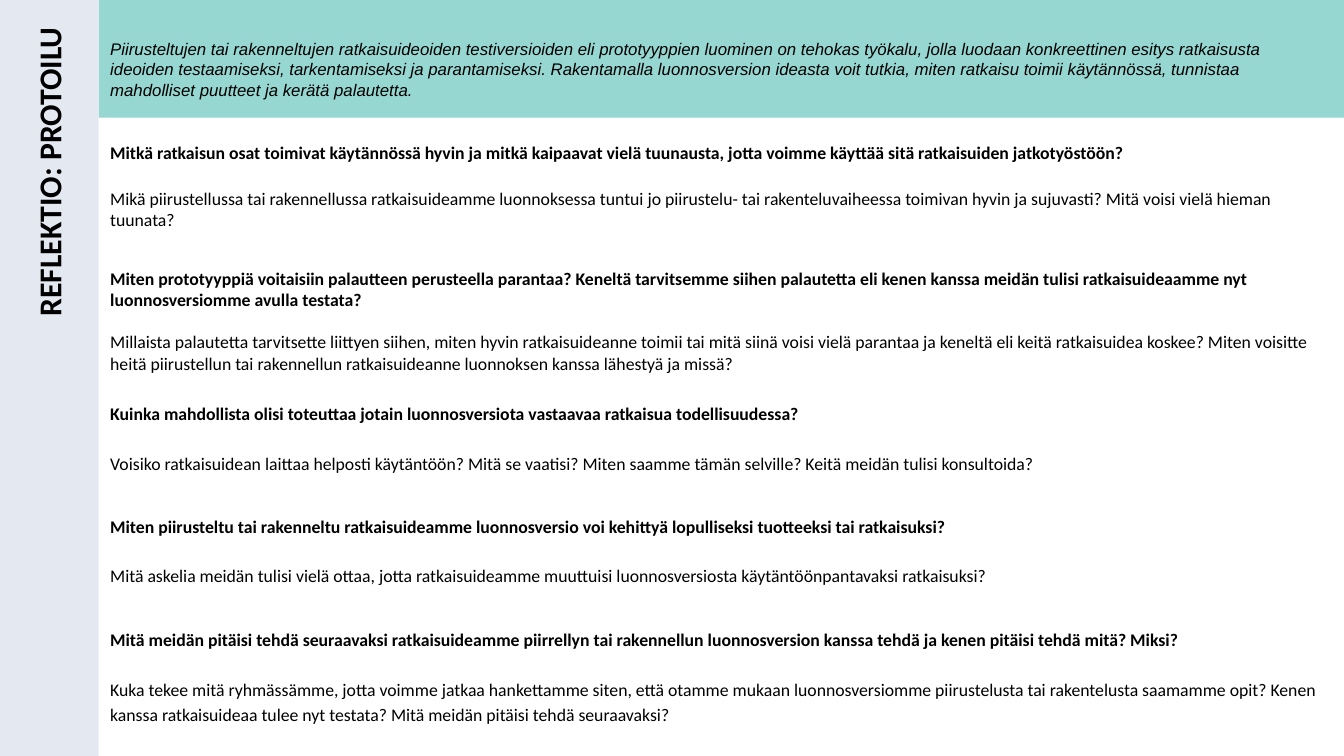
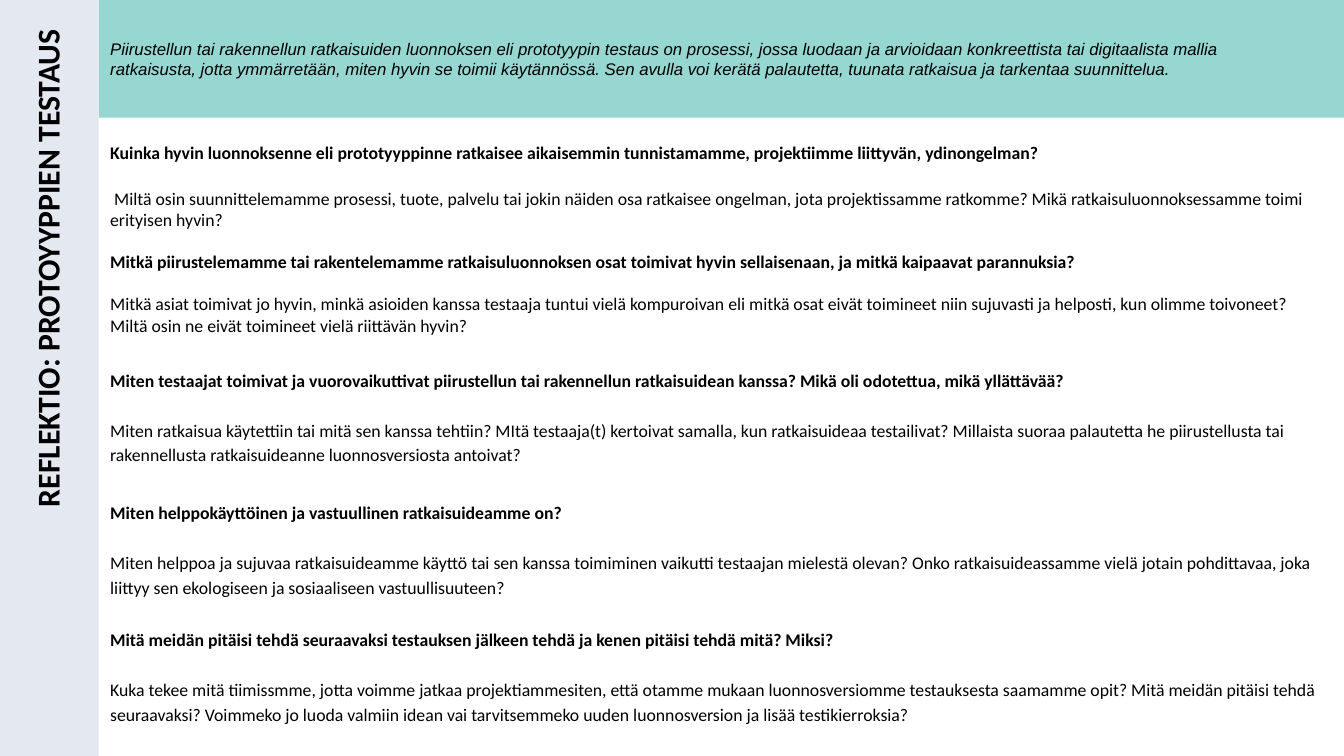
import dataclasses

import pptx
import pptx.dml.color
import pptx.enum.shapes
import pptx.enum.text
import pptx.util


@dataclasses.dataclass(frozen=True)
class Theme:
    ink: str = "000000"
    side: str = "E4E8F0"
    top: str = "96D7D1"
    font: str = "Calibri"
    intro_font: str = "Arial"
    title_size: int = 34
    intro_size: int = 18
    body_size: int = 19
    tight: float = 1.2
    loose: float = 1.4


COLS, ROWS = 20, 11.25
SIDE_COLS, TOP_ROWS = 1.47, 1.75
TEXT_LEFT, TEXT_COLS = 1.64, 18.07
TITLE_ONLY = 5
T = Theme()


def rgb(value):
    return pptx.dml.color.RGBColor.from_string(value)


def write(p, text, size=T.body_size, font=T.font, color=T.ink, bold=False,
          italic=False, leading=T.loose, before=0, align=None):
    """Fill a paragraph; leading and before are multiples of the type size."""
    p.line_spacing = pptx.util.Centipoints(round(size * leading * 100))
    p.space_before = pptx.util.Centipoints(round(size * before * 100))
    p.alignment = align
    r = p.add_run()
    r.text = text
    f = r.font
    f.size, f.name, f.bold, f.italic = pptx.util.Pt(size), font, bold, italic
    f.color.rgb = rgb(color)


class Deck:
    def __init__(self):
        self.prs = pptx.Presentation()
        self.prs.slide_width = pptx.util.Inches(COLS)
        self.prs.slide_height = pptx.util.Inches(ROWS)
        self.s = None

    def grid(self, left, top, cols, rows):
        """Turn grid columns and rows into slide lengths."""
        col, row = self.prs.slide_width / COLS, self.prs.slide_height / ROWS
        return round(left * col), round(top * row), round(cols * col), round(rows * row)

    def frame(self, sp):
        tf = sp.text_frame
        tf.word_wrap = True
        tf.auto_size = pptx.enum.text.MSO_AUTO_SIZE.NONE
        tf.vertical_anchor = pptx.enum.text.MSO_ANCHOR.TOP
        tf.margin_left = tf.margin_top = tf.margin_right = tf.margin_bottom = 0
        return tf

    def slide(self):
        self.s = self.prs.slides.add_slide(self.prs.slide_layouts[TITLE_ONLY])
        self.band(T.side, 0, 0, SIDE_COLS, ROWS)
        self.band(T.top, SIDE_COLS, 0, COLS - SIDE_COLS, TOP_ROWS)

    def band(self, color, *box):
        kind = pptx.enum.shapes.MSO_SHAPE.RECTANGLE
        sp = self.s.shapes.add_shape(kind, *self.grid(*box))
        sp.shadow.inherit = False
        sp.fill.solid()
        sp.fill.fore_color.rgb = rgb(color)
        sp.line.fill.background()

    def title(self, text, box, leading):
        """Set the title upwards along the side band, in front of it."""
        sp = self.s.shapes.title
        sp.left, sp.top, sp.width, sp.height = self.grid(*box)
        sp.rotation = 270
        write(self.frame(sp).paragraphs[0], text, size=T.title_size, bold=True,
              leading=leading, align=pptx.enum.text.PP_ALIGN.RIGHT)
        sp.element.getparent().append(sp.element)

    def text_box(self, *box):
        return self.frame(self.s.shapes.add_textbox(*self.grid(*box)))

    def intro(self, text):
        tf = self.text_box(TEXT_LEFT, 0.58, 17.73, 0.88)
        write(tf.paragraphs[0], text, size=T.intro_size, font=T.intro_font,
              italic=True, leading=T.tight)

    def question(self, top, rows, heading, hint, leading=T.loose, hint_leading=T.loose):
        tf = self.text_box(TEXT_LEFT, top, TEXT_COLS, rows)
        write(tf.paragraphs[0], heading, bold=True, leading=leading)
        write(tf.add_paragraph(), hint, leading=hint_leading, before=leading)


SLIDES = [
    dict(
        title=("REFLEKTIO: PROTOILU", (-4.49, 5.34, 10.43, 0.57), T.tight),
        intro="Piirusteltujen tai rakenneltujen ratkaisuideoiden testiversioiden eli "
              "prototyyppien luominen on tehokas työkalu, jolla luodaan konkreettinen "
              "esitys ratkaisusta ideoiden testaamiseksi, tarkentamiseksi ja "
              "parantamiseksi. Rakentamalla luonnosversion ideasta voit tutkia, miten "
              "ratkaisu toimii käytännössä, tunnistaa mahdolliset puutteet ja kerätä "
              "palautetta.",
        questions=[
            (2.05, 1.68,
             "Mitkä ratkaisun osat toimivat käytännössä hyvin ja mitkä kaipaavat vielä "
             "tuunausta, jotta voimme käyttää sitä ratkaisuiden jatkotyöstöön?",
             "Mikä piirustellussa tai rakennellussa ratkaisuideamme luonnoksessa tuntui "
             "jo piirustelu- tai rakenteluvaiheessa toimivan hyvin ja sujuvasti? Mitä "
             "voisi vielä hieman tuunata?",
             T.loose, T.tight),
            (3.98, 1.56,
             "Miten prototyyppiä voitaisiin palautteen perusteella parantaa? Keneltä "
             "tarvitsemme siihen palautetta eli kenen kanssa meidän tulisi "
             "ratkaisuideaamme nyt luonnosversiomme avulla testata?",
             "Millaista palautetta tarvitsette liittyen siihen, miten hyvin "
             "ratkaisuideanne toimii tai mitä siinä voisi vielä parantaa ja keneltä eli "
             "keitä ratkaisuidea koskee? Miten voisitte heitä piirustellun tai "
             "rakennellun ratkaisuideanne luonnoksen kanssa lähestyä ja missä?",
             T.tight, T.tight),
            (5.94, 1.08,
             "Kuinka mahdollista olisi toteuttaa jotain luonnosversiota vastaavaa "
             "ratkaisua todellisuudessa?",
             "Voisiko ratkaisuidean laittaa helposti käytäntöön? Mitä se vaatisi? Miten "
             "saamme tämän selville? Keitä meidän tulisi konsultoida?"),
            (7.62, 1.08,
             "Miten piirusteltu tai rakenneltu ratkaisuideamme luonnosversio voi "
             "kehittyä lopulliseksi tuotteeksi tai ratkaisuksi?",
             "Mitä askelia meidän tulisi vielä ottaa, jotta ratkaisuideamme muuttuisi "
             "luonnosversiosta käytäntöönpantavaksi ratkaisuksi?"),
            (9.31, 1.45,
             "Mitä meidän pitäisi tehdä seuraavaksi ratkaisuideamme piirrellyn tai "
             "rakennellun luonnosversion kanssa tehdä ja kenen pitäisi tehdä mitä? Miksi?",
             "Kuka tekee mitä ryhmässämme, jotta voimme jatkaa hankettamme siten, että "
             "otamme mukaan luonnosversiomme piirustelusta tai rakentelusta saamamme "
             "opit? Kenen kanssa ratkaisuideaa tulee nyt testata? Mitä meidän pitäisi "
             "tehdä seuraavaksi?"),
        ],
    ),
    dict(
        title=("REFLEKTIO: PROTOYYPPIEN TESTAUS", (-4.76, 5.52, 10.81, 0.65), T.loose),
        intro="Piirustellun tai rakennellun ratkaisuiden luonnoksen eli prototyypin "
              "testaus on prosessi, jossa luodaan ja arvioidaan konkreettista tai "
              "digitaalista mallia ratkaisusta, jotta ymmärretään, miten hyvin se toimii "
              "käytännössä. Sen avulla voi kerätä palautetta, tuunata ratkaisua ja "
              "tarkentaa suunnittelua.",
        questions=[
            (2.05, 1.37,
             "Kuinka hyvin luonnoksenne eli prototyyppinne ratkaisee aikaisemmin "
             "tunnistamamme, projektiimme liittyvän, ydinongelman?",
             " Miltä osin suunnittelemamme prosessi, tuote, palvelu tai jokin näiden osa "
             "ratkaisee ongelman, jota projektissamme ratkomme? Mikä "
             "ratkaisuluonnoksessamme toimi erityisen hyvin?",
             T.loose, T.tight),
            (3.73, 1.25,
             "Mitkä piirustelemamme tai rakentelemamme ratkaisuluonnoksen osat toimivat "
             "hyvin sellaisenaan, ja mitkä kaipaavat parannuksia?",
             "Mitkä asiat toimivat jo hyvin, minkä asioiden kanssa testaaja tuntui vielä "
             "kompuroivan eli mitkä osat eivät toimineet niin sujuvasti ja helposti, kun "
             "olimme toivoneet? Miltä osin ne eivät toimineet vielä riittävän hyvin?",
             T.tight, T.tight),
            (5.45, 1.45,
             "Miten testaajat toimivat ja vuorovaikuttivat piirustellun tai rakennellun "
             "ratkaisuidean kanssa? Mikä oli odotettua, mikä yllättävää?",
             "Miten ratkaisua käytettiin tai mitä sen kanssa tehtiin? MItä testaaja(t) "
             "kertoivat samalla, kun ratkaisuideaa testailivat? Millaista suoraa "
             "palautetta he piirustellusta tai rakennellusta ratkaisuideanne "
             "luonnosversiosta antoivat?"),
            (7.42, 1.45,
             "Miten helppokäyttöinen ja vastuullinen ratkaisuideamme on?",
             "Miten helppoa ja sujuvaa ratkaisuideamme käyttö tai sen kanssa toimiminen "
             "vaikutti testaajan mielestä olevan? Onko ratkaisuideassamme vielä jotain "
             "pohdittavaa, joka liittyy sen ekologiseen ja sosiaaliseen "
             "vastuullisuuteen?"),
            (9.31, 1.45,
             "Mitä meidän pitäisi tehdä seuraavaksi testauksen jälkeen tehdä ja kenen "
             "pitäisi tehdä mitä? Miksi?",
             "Kuka tekee mitä tiimissmme, jotta voimme jatkaa projektiammesiten, että "
             "otamme mukaan luonnosversiomme testauksesta saamamme opit? Mitä meidän "
             "pitäisi tehdä seuraavaksi? Voimmeko jo luoda valmiin idean vai "
             "tarvitsemmeko uuden luonnosversion ja lisää testikierroksia?"),
        ],
    ),
]


def main():
    deck = Deck()
    for content in SLIDES:
        deck.slide()
        deck.title(*content["title"])
        deck.intro(content["intro"])
        for question in content["questions"]:
            deck.question(*question)
    deck.prs.save("out.pptx")


if __name__ == "__main__":
    main()
